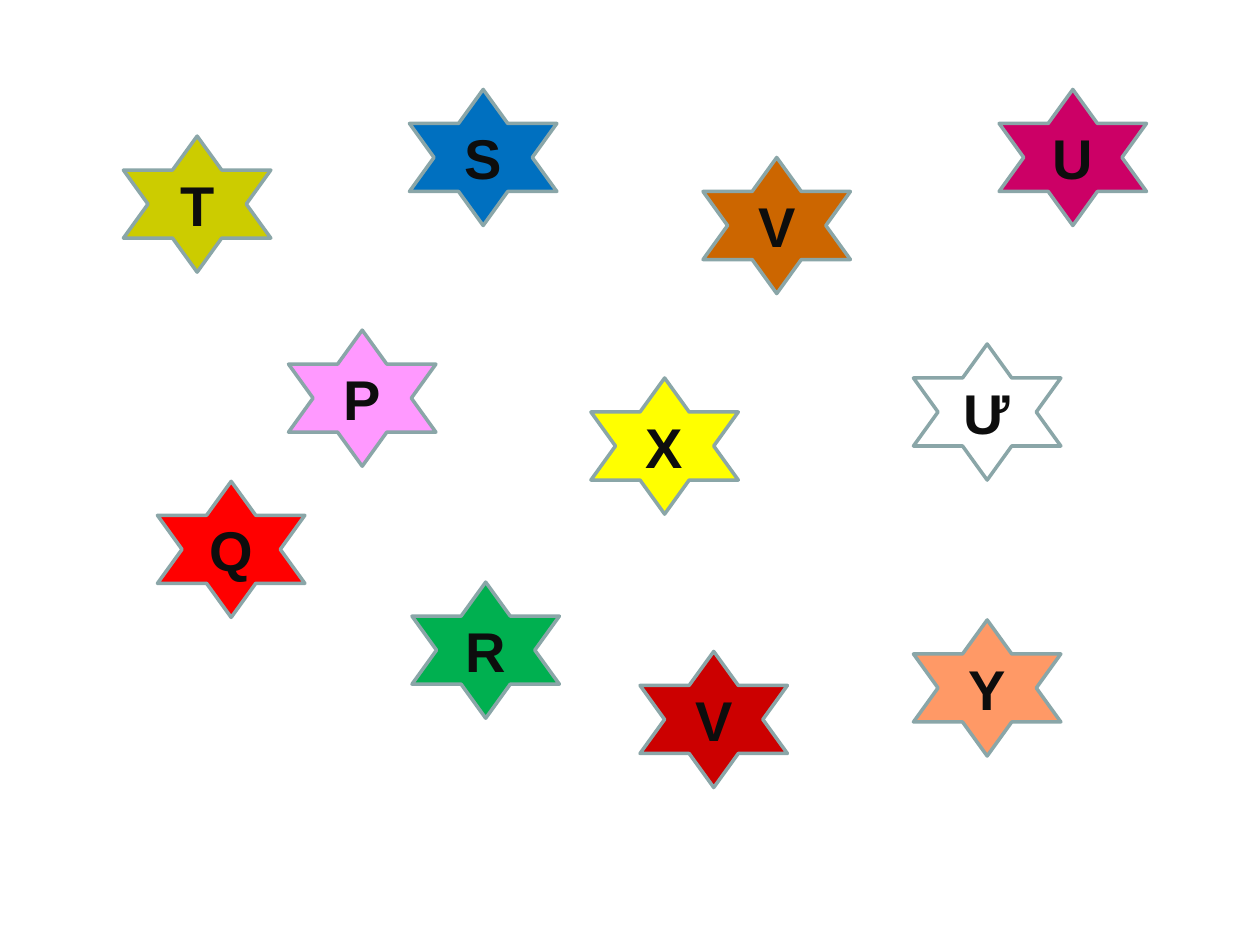
from pptx import Presentation
from pptx.dml.color import RGBColor
from pptx.enum.shapes import MSO_SHAPE
from pptx.enum.text import MSO_ANCHOR, PP_ALIGN
from pptx.util import Inches, Pt

# Content: letter, left, top, fill
STARS = [
    ("P", 2.29, 2.62, "FF99FF"),
    ("Q", 1.25, 3.82, "FF0000"),
    ("X", 4.69, 3.00, "FFFF00"),
    ("R", 3.27, 4.62, "00B050"),
    ("S", 3.25, 0.71, "0070C0"),
    ("T", 0.98, 1.08, "CCCC00"),
    ("V", 5.08, 5.17, "CC0000"),
    ("U", 7.93, 0.71, "CC0066"),
    ("Ư", 7.25, 2.73, "FFFFFF"),
    ("V", 5.58, 1.25, "CC6600"),
    ("Y", 7.25, 4.92, "FF9966"),
]
STAR_W, STAR_H = 1.17, 1.08
OUTLINE, INK = "8AA6A8", "0D0D0D"


def paint(color, value):
    color.rgb = RGBColor.from_string(value)


def add_star(s, letter, left, top, fill):
    sp = s.shapes.add_shape(MSO_SHAPE.STAR_6_POINT, Inches(left), Inches(top),
                            Inches(STAR_W), Inches(STAR_H))
    sp.shadow.inherit = False
    sp.fill.solid()
    paint(sp.fill.fore_color, fill)
    paint(sp.line.color, OUTLINE)
    sp.line.width = Pt(2)

    # Centred letter
    tf = sp.text_frame
    tf.word_wrap = True
    tf.vertical_anchor = MSO_ANCHOR.MIDDLE
    p = tf.paragraphs[0]
    p.alignment = PP_ALIGN.CENTER
    r = p.add_run()
    r.text = letter
    r.font.name = "Arial"
    r.font.size = Pt(32)
    r.font.bold = True
    paint(r.font.color, INK)


def main():
    prs = Presentation()
    prs.slide_width, prs.slide_height = Inches(10), Inches(7.5)
    s = prs.slides.add_slide(prs.slide_layouts[6])
    for star in STARS:
        add_star(s, *star)
    prs.save("out.pptx")


if __name__ == "__main__":
    main()
